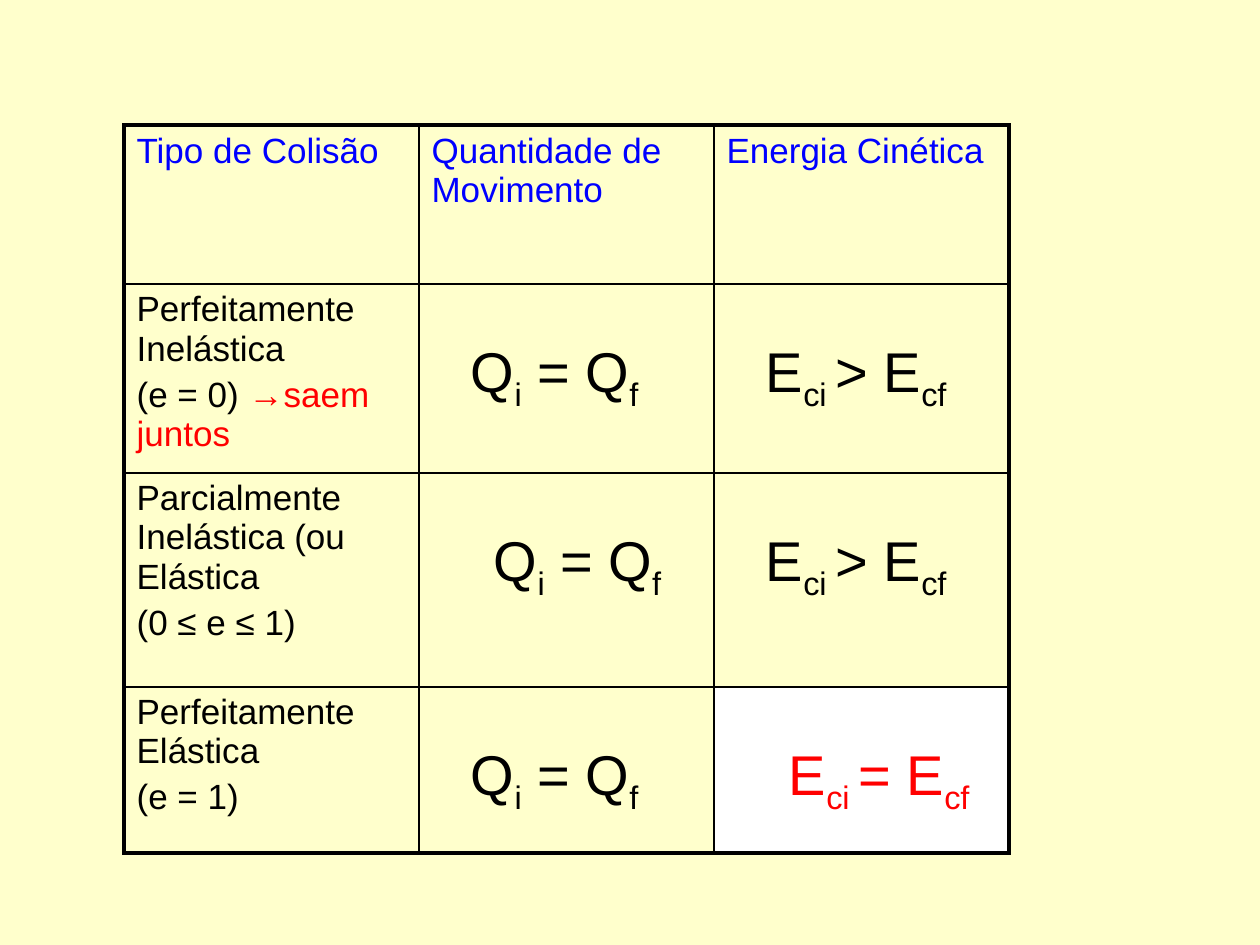
from lxml.etree import SubElement
from pptx import Presentation
from pptx.dml.color import RGBColor
from pptx.oxml.ns import qn
from pptx.util import Emu, Pt

PIXEL = 914400 // 126
CREAM = RGBColor(0xFF, 0xFF, 0xCC)
WHITE = RGBColor(0xFF, 0xFF, 0xFF)
BLACK = RGBColor(0, 0, 0)
BLUE = RGBColor(0, 0, 0xFF)
RED = RGBColor(0xFF, 0, 0)

COLUMN_WIDTH = 295
ROW_HEIGHTS = [159, 189, 214, 166]
HEADERS = ["Tipo de Colisão", "Quantidade de Movimento", "Energia Cinética"]
NARROW_INDENT, WIDE_INDENT = 52, 75
MOMENTUM = [("Q", False), ("i", True), (" = Q", False), ("f", True)]


def energy(sign):
    return [("E", False), ("ci ", True), (f"{sign} E", False), ("cf", True)]


COLLISIONS = [
    ([[("Perfeitamente Inelástica", BLACK)],
      [("(e = 0) ", BLACK), ("→saem juntos", RED)]],
     NARROW_INDENT, energy(">"), NARROW_INDENT, BLACK),
    ([[("Parcialmente Inelástica (ou Elástica", BLACK)],
      [("(0 ≤ e ≤ 1)", BLACK)]],
     WIDE_INDENT, energy(">"), NARROW_INDENT, BLACK),
    ([[("Perfeitamente Elástica", BLACK)],
      [("(e = 1)", BLACK)]],
     NARROW_INDENT, energy("="), WIDE_INDENT, RED),
]


def px(length):
    return Emu(length * PIXEL)


class SlideBuilder:
    font_name = "Arial"
    text_size = 20
    formula_size = 32
    formula_top = 58
    thin, thick = 1, 2.25

    def __init__(self, presentation):
        self.slide = presentation.slides.add_slide(presentation.slide_layouts[6])

    def background(self, color):
        fill = self.slide.background.fill
        fill.solid()
        fill.fore_color.rgb = color

    def table(self, left, top, column_widths, row_heights):
        shape = self.slide.shapes.add_table(
            len(row_heights), len(column_widths), px(left), px(top),
            px(sum(column_widths)), px(sum(row_heights)))
        table = shape.table
        table.first_row = table.horz_banding = False
        for column, width in zip(table.columns, column_widths):
            column.width = px(width)
        for row, height in zip(table.rows, row_heights):
            row.height = px(height)
        last_row, last_column = len(row_heights) - 1, len(column_widths) - 1
        for i, row in enumerate(table.rows):
            for j, cell in enumerate(row.cells):
                self.borders(cell, {"L": j == 0, "R": j == last_column,
                                    "T": i == 0, "B": i == last_row})
                cell.fill.background()
        return table

    def borders(self, cell, outer_sides):
        properties = cell._tc.get_or_add_tcPr()
        for side, is_outer in outer_sides.items():
            width = Pt(self.thick if is_outer else self.thin)
            line = SubElement(properties, qn(f"a:ln{side}"), w=str(int(width)))
            fill = SubElement(line, qn("a:solidFill"))
            SubElement(fill, qn("a:srgbClr"), val=str(BLACK))

    def run(self, paragraph, text, size, color, subscript=False):
        run = paragraph.add_run()
        run.text = text
        run.font.name = self.font_name
        run.font.size = Pt(size)
        run.font.color.rgb = color
        if subscript:
            run._r.get_or_add_rPr().set("baseline", "-25000")

    def text_cell(self, cell, paragraphs):
        frame = cell.text_frame
        for index, runs in enumerate(paragraphs):
            paragraph = frame.add_paragraph() if index else frame.paragraphs[0]
            paragraph.space_before = Pt(4 if index else 0)
            for text, color in runs:
                self.run(paragraph, text, self.text_size, color)

    def formula_cell(self, cell, parts, indent, color):
        cell.margin_left = px(indent)
        cell.margin_top = px(self.formula_top)
        paragraph = cell.text_frame.paragraphs[0]
        for text, subscript in parts:
            self.run(paragraph, text, self.formula_size, color, subscript)


def main():
    presentation = Presentation()
    presentation.slide_width = px(1260)
    presentation.slide_height = px(945)
    builder = SlideBuilder(presentation)
    builder.background(CREAM)
    table = builder.table(124, 125, [COLUMN_WIDTH] * len(HEADERS), ROW_HEIGHTS)

    for column, header in enumerate(HEADERS):
        builder.text_cell(table.cell(0, column), [[(header, BLUE)]])
    for row, collision in enumerate(COLLISIONS, start=1):
        kind, momentum_indent, energy_parts, energy_indent, energy_color = collision
        builder.text_cell(table.cell(row, 0), kind)
        builder.formula_cell(table.cell(row, 1), MOMENTUM, momentum_indent, BLACK)
        builder.formula_cell(table.cell(row, 2), energy_parts, energy_indent, energy_color)

    highlight = table.cell(len(COLLISIONS), 2).fill
    highlight.solid()
    highlight.fore_color.rgb = WHITE
    presentation.save("out.pptx")


if __name__ == "__main__":
    main()
